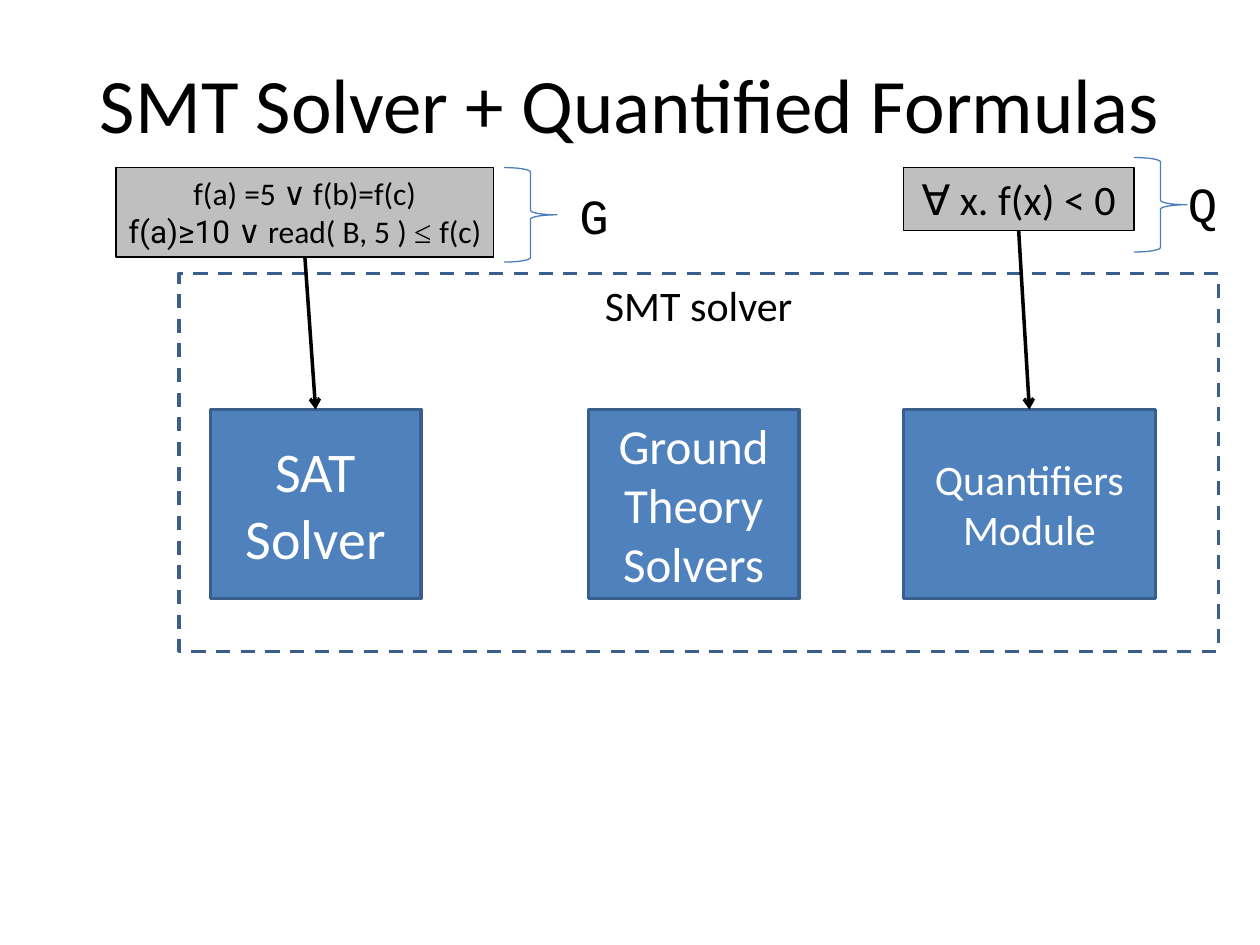
from dataclasses import dataclass

from lxml import etree
from pptx import Presentation, util as u
from pptx.dml import color
from pptx.enum import dml, shapes, text
from pptx.oxml import ns

Inches = u.Inches


@dataclass(frozen=True)
class Theme:
    black: str = "000000"
    white: str = "FFFFFF"
    module_fill: str = "4F81BD"
    module_line: str = "3A5F8C"
    brace_line: str = "4B7EBC"
    formula_fill: str = "BFBFBF"
    body_font: str = "Calibri"
    label_font: str = "Courier New"
    title_size: int = 44
    sat_size: int = 32
    large_size: int = 28
    medium_size: int = 24
    small_size: int = 18
    thick: float = 2
    thin: float = 0.75


THEME = Theme()
MIDDLE, TOP = text.MSO_ANCHOR.MIDDLE, text.MSO_ANCHOR.TOP
CENTER, LEFT = text.PP_ALIGN.CENTER, text.PP_ALIGN.LEFT
BOTTOM_SIDE, TOP_SIDE = 2, 0


def apply_format(target, values):
    for name, value in values.items():
        setattr(target, name, value)


def rgb(value):
    return color.RGBColor.from_string(value)


def write_text(shape, lines, size, ink=THEME.black, font=THEME.body_font,
               anchor=MIDDLE, align=CENTER, wrap=True):
    """Each line is a string, or a list of (text, font) runs."""
    frame = shape.text_frame
    apply_format(frame, {"word_wrap": wrap, "vertical_anchor": anchor})
    for index, line in enumerate(lines):
        paragraph = frame.add_paragraph() if index else frame.paragraphs[0]
        paragraph.alignment = align
        for words, run_font in [(line, font)] if isinstance(line, str) else line:
            run = paragraph.add_run()
            run.text = words
            apply_format(run.font, {"name": run_font, "size": u.Pt(size)})
            run.font.color.rgb = rgb(ink)


def add_text(slide, box, lines, size, **options):
    shape = slide.shapes.add_textbox(*map(Inches, box))
    write_text(shape, lines, size, **options)


def add_outline(slide, kind, box, line, width, fill=None):
    shape = slide.shapes.add_shape(kind, *map(Inches, box))
    shape.shadow.inherit = False
    if fill:
        shape.fill.solid()
        shape.fill.fore_color.rgb = rgb(fill)
    else:
        shape.fill.background()
    shape.line.color.rgb = rgb(line)
    shape.line.width = u.Pt(width)
    return shape


def add_arrow(slide, source, target):
    arrow = slide.shapes.add_connector(shapes.MSO_CONNECTOR.STRAIGHT, 0, 0, 0, 0)
    arrow.begin_connect(source, BOTTOM_SIDE)
    arrow.end_connect(target, TOP_SIDE)
    arrow.line.color.rgb = rgb(THEME.black)
    arrow.line.width = u.Pt(THEME.thick)
    etree.SubElement(arrow.line._get_or_add_ln(), ns.qn("a:tailEnd"), type="arrow")
    etree.SubElement(arrow._element.spPr, ns.qn("a:effectLst"))


def add_solver(slide, box):
    """Dashed frame with its modules; returns the module shapes."""
    left, top, width, height = box
    rectangle = shapes.MSO_SHAPE.RECTANGLE
    frame = add_outline(slide, rectangle, box, THEME.module_line, THEME.thick)
    frame.line.dash_style = dml.MSO_LINE.DASH
    write_text(frame, ["SMT solver"], THEME.medium_size, anchor=TOP)

    modules = [
        (0.25, 1.67, ["SAT Solver"], THEME.sat_size),
        (3.25, 1.67, ["Ground", "Theory Solvers"], THEME.large_size),
        (5.75, 2, ["Quantifiers Module"], THEME.medium_size),
    ]
    result = []
    for offset, module_width, lines, size in modules:
        module_box = (left + offset, top + 1.08, module_width, height / 2)
        module = add_outline(slide, rectangle, module_box, THEME.module_line,
                             THEME.thick, THEME.module_fill)
        write_text(module, lines, size, ink=THEME.white)
        result.append(module)
    return result


def add_formula(slide, box, lines, size, brace_at, label_at, label):
    """Grey formula box with a brace and a set name; returns the box shape."""
    formula = add_outline(slide, shapes.MSO_SHAPE.RECTANGLE, box, THEME.black,
                          THEME.thin, THEME.formula_fill)
    write_text(formula, lines, size, anchor=TOP, wrap=False)
    add_outline(slide, shapes.MSO_SHAPE.RIGHT_BRACE, (*brace_at, 0.42, 0.75),
                THEME.brace_line, THEME.thin)
    add_text(slide, (*label_at, 0.45, 0.57), [label], THEME.large_size,
             font=THEME.label_font, anchor=TOP, align=LEFT, wrap=False)
    return formula


def main():
    presentation = Presentation()
    apply_format(presentation, {"slide_width": Inches(10), "slide_height": Inches(7.5)})
    slide = presentation.slides.add_slide(presentation.slide_layouts[6])

    # Title
    add_text(slide, (0.5, 0.3, 9, 1.03), ["SMT Solver + Quantified Formulas"],
             THEME.title_size)

    # Solver and its modules
    sat, _, quantifiers = add_solver(slide, (1.42, 2.17, 8.25, 3))

    # Input formulas
    ground_lines = [
        "f(a) =5 ∨ f(b)=f(c)",
        [("f(a)≥10 ", "Roboto"), ("∨ read( B, 5 ) ", THEME.body_font),
         ("≤ ", "Times New Roman"), ("f(c)", THEME.body_font)],
    ]
    ground = add_formula(slide, (0.92, 1.33, 3, 0.71), ground_lines,
                         THEME.small_size, (4, 1.33), (4.5, 1.42), "G")
    quantified = add_formula(slide, (7.17, 1.33, 1.83, 0.5), ["∀ x. f(x) < 0"],
                             THEME.medium_size, (9, 1.25), (9.33, 1.33), "Q")

    # Arrows from formulas to modules
    add_arrow(slide, ground, sat)
    add_arrow(slide, quantified, quantifiers)

    presentation.save("out.pptx")


if __name__ == "__main__":
    main()
